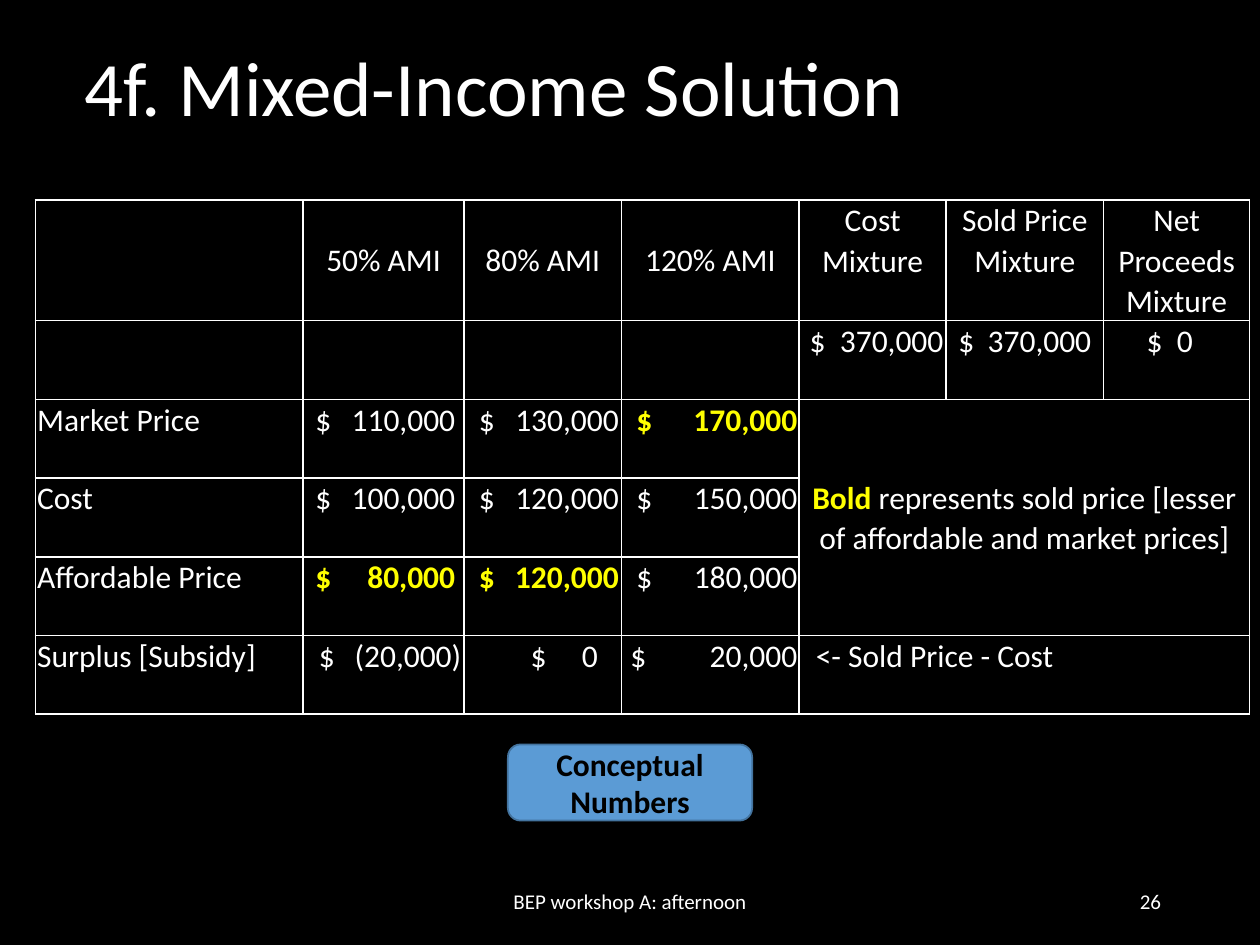
"""Build the mixed-income solution slide with its pricing table."""
import lxml.etree
import pptx
import pptx.dml.color
import pptx.enum.shapes
import pptx.enum.text
import pptx.oxml
import pptx.oxml.ns
import pptx.util

Pt = pptx.util.Pt
ALIGN = pptx.enum.text.PP_ALIGN
MIDDLE = pptx.enum.text.MSO_ANCHOR.MIDDLE
TOP = pptx.enum.text.MSO_ANCHOR.TOP
BLACK = pptx.dml.color.RGBColor(0x00, 0x00, 0x00)
WHITE = pptx.dml.color.RGBColor(0xFF, 0xFF, 0xFF)
YELLOW = pptx.dml.color.RGBColor(0xFF, 0xFF, 0x00)
BLUE = pptx.dml.color.RGBColor(0x5B, 0x9B, 0xD5)
DARK_BLUE = pptx.dml.color.RGBColor(0x43, 0x73, 0x9E)


def style_para(para, size, color=WHITE, align=ALIGN.LEFT, bold=False):
    para.alignment = align
    para.font.name = "Calibri"
    para.font.size = Pt(size)
    para.font.bold = bold
    para.font.color.rgb = color


def format_cell(cell):
    properties = cell._tc.get_or_add_tcPr()
    for side in ("lnL", "lnR", "lnT", "lnB"):
        line = lxml.etree.SubElement(properties, pptx.oxml.ns.qn(f"a:{side}"), w=str(Pt(1)))
        fill = lxml.etree.SubElement(line, pptx.oxml.ns.qn("a:solidFill"))
        lxml.etree.SubElement(fill, pptx.oxml.ns.qn("a:srgbClr"), val=str(WHITE))
    cell.fill.solid()
    cell.fill.fore_color.rgb = BLACK
    cell.margin_left = cell.margin_right = Pt(1)
    cell.margin_top = cell.margin_bottom = 0


deck = pptx.Presentation()
deck.slide_width, deck.slide_height = Pt(720), Pt(540)
page = deck.slides.add_slide(deck.slide_layouts[5])
page.background.fill.solid()
page.background.fill.fore_color.rgb = BLACK

title = page.shapes.title
title.left, title.top, title.width, title.height = Pt(41), Pt(0), Pt(620.6), Pt(104.4)
title.text_frame.text = "4f. Mixed-Income Solution"
title.text_frame.vertical_anchor = MIDDLE
title.text_frame.auto_size = pptx.enum.text.MSO_AUTO_SIZE.NONE
title.text_frame.paragraphs[0].line_spacing = 0.9
style_para(title.text_frame.paragraphs[0], 44)

for text, left, width, align in (
    ("BEP workshop A: afternoon", 238.5, 243, ALIGN.CENTER),
    ("26", 508.5, 162, ALIGN.RIGHT),
):
    box = page.shapes.add_textbox(Pt(left), Pt(500.5), Pt(width), Pt(28.75))
    box.text_frame.word_wrap = True
    box.text_frame.vertical_anchor = MIDDLE
    box.text_frame.text = text
    style_para(box.text_frame.paragraphs[0], 12, align=align)

rows = [
    ["", "50% AMI", "80% AMI", "120% AMI", "Cost Mixture", "Sold Price Mixture", "Net Proceeds Mixture"],
    ["", "", "", "", "$\t370,000", "$\t370,000", "$\t0"],
    ["Market Price", "$\t110,000", "$\t130,000", "$\t170,000", "", "", ""],
    ["Cost", "$\t100,000", "$\t120,000", "$\t150,000", "", "", ""],
    ["Affordable Price", "$\t80,000", "$\t120,000", "$\t180,000", "", "", ""],
    ["Surplus [Subsidy]", "$\t(20,000)", "$\t0", "$\t20,000", "<- Sold Price - Cost", "", ""],
]
column_widths = [153, 92, 90, 101.5, 84, 90, 83.5]
row_heights = [69, 45, 45, 45, 45, 45]
sold_prices = {(2, 3), (4, 1), (4, 2)}
dollar_spans = {1: (7, 87), 2: (8.5, 88.5), 3: (8.5, 100.5), 4: (6, 82.5), 5: (7, 83), 6: (24.5, 51)}
special_spans = {(5, 1): (9, 90.5), (5, 2): (38, 76.5), (5, 3): (5, 100.5)}

frame = page.shapes.add_table(6, 7, Pt(20.2), Pt(114.2), Pt(sum(column_widths)), Pt(sum(row_heights)))
table = frame.table
table.first_row = table.horz_banding = False
for column, width in zip(table.columns, column_widths):
    column.width = Pt(width)
for row, height in zip(table.rows, row_heights):
    row.height = Pt(height)
table.cell(2, 4).merge(table.cell(4, 6))
table.cell(5, 4).merge(table.cell(5, 6))

for row_index, row in enumerate(rows):
    for column_index, text in enumerate(row):
        cell = table.cell(row_index, column_index)
        format_cell(cell)
        para = cell.text_frame.paragraphs[0]
        para.line_spacing = 1.05
        sold = (row_index, column_index) in sold_prices
        is_header = row_index == 0
        cell.vertical_anchor = MIDDLE if is_header and column_index < 4 else TOP
        if text.startswith("$"):
            start, end = special_spans.get((row_index, column_index), dollar_spans[column_index])
            cell.margin_left = Pt(start)
            cell.margin_right = 0
            tabs = lxml.etree.SubElement(para._p.get_or_add_pPr(), pptx.oxml.ns.qn("a:tabLst"))
            lxml.etree.SubElement(tabs, pptx.oxml.ns.qn("a:tab"), pos=str(Pt(end - start)), algn="r")
        if text:
            para.add_run().text = text
        style_para(para, 18, YELLOW if sold else WHITE, ALIGN.CENTER if is_header else ALIGN.LEFT, sold)

table.cell(5, 4).margin_left = Pt(9.5)
legend = table.cell(2, 4)
legend.vertical_anchor = MIDDLE
para = legend.text_frame.paragraphs[0]
style_para(para, 18, align=ALIGN.CENTER)
span = para.add_run()
span.text = "Bold "
span.font.bold = True
span.font.color.rgb = YELLOW
para.add_run().text = "represents sold price [lesser of affordable and market prices]"

badge = page.shapes.add_shape(
    pptx.enum.shapes.MSO_SHAPE.ROUNDED_RECTANGLE, Pt(290.2), Pt(425.4), Pt(139.6), Pt(43.5)
)
badge.shadow.inherit = False
badge.fill.solid()
badge.fill.fore_color.rgb = BLUE
badge.line.color.rgb = DARK_BLUE
badge.line.width = Pt(1)
badge.text_frame.word_wrap = True
badge.text_frame.vertical_anchor = MIDDLE
badge.text_frame.text = "Conceptual Numbers"
style_para(badge.text_frame.paragraphs[0], 18, BLACK, ALIGN.CENTER, True)

deck.save("out.pptx")
